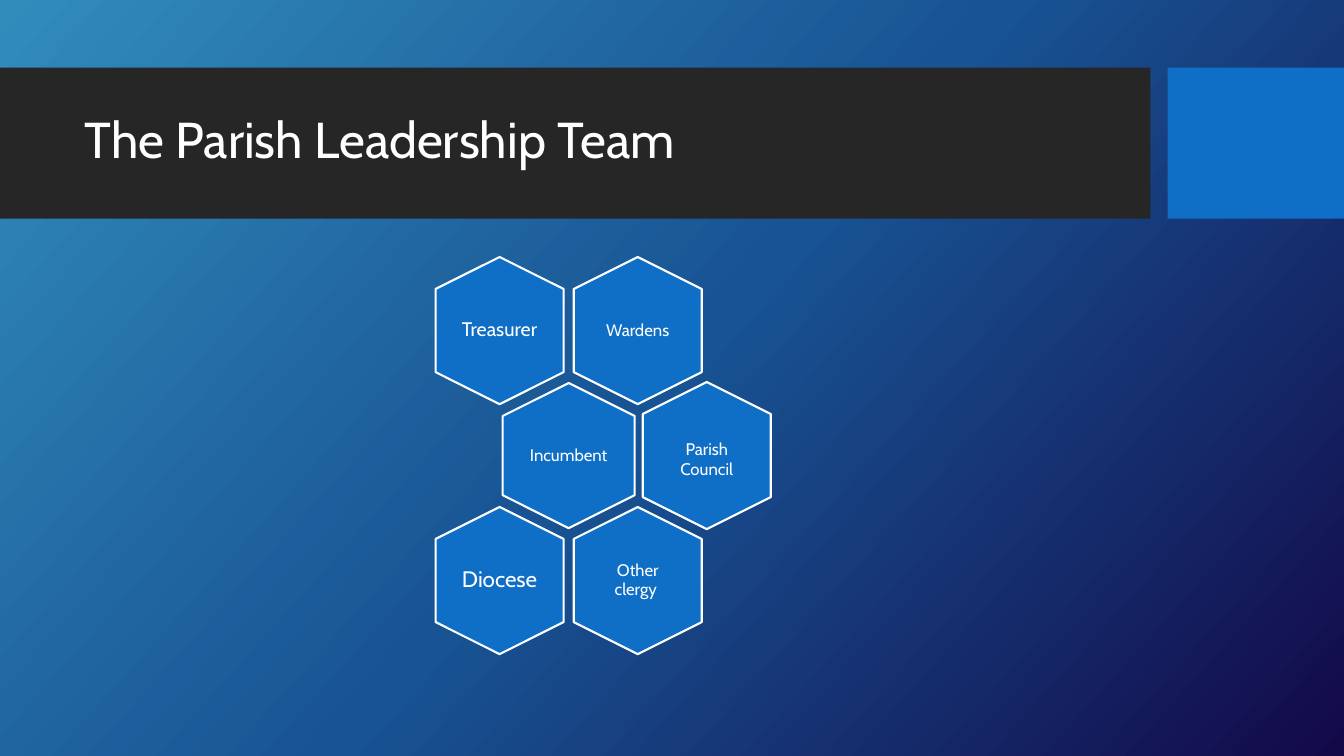
import copy

import pptx
import pptx.dml.color
import pptx.enum.shapes
import pptx.enum.text
import pptx.oxml.ns
import pptx.util

Inches = pptx.util.Inches
Pt = pptx.util.Pt

FONT = "Cabin"
COLORS = {
    "sky": "318CBC",
    "ocean": "185393",
    "night": "130949",
    "band": "262626",
    "accent": "0F6FC6",
    "white": "FFFFFF",
}
HEXAGON_SIZE = (1.46, 1.27)
INCUMBENT_SIZE = (1.44, 1.31)
LABEL_SIZE = (0.87, 1.0)
INCUMBENT_LABEL_SIZE = (0.89, 0.99)
COLUMN_STEP = 1.37
ROW_STEP = 1.24

# Each member: row, column, runs of (text, size), label inset
MEMBERS = [
    (0, 1, [("Wardens", 12)], 0.05),
    (0, 0, [("Treasurer", 14)], 0),
    (1, 0, [("Incumbent", 12)], 0.05),
    (1, 1, [("Parish", 12), (" ", 19), ("Council", 12)], 0),
    (2, 1, [("Other clergy ", 12)], 0.05),
    (2, 0, [("Diocese", 16)], 0),
]


def color(name):
    return pptx.dml.color.RGBColor.from_string(COLORS[name])


def add_run(paragraph, text, size):
    run = paragraph.add_run()
    run.text = text
    run.font.name = FONT
    run.font.size = Pt(size)
    run.font.color.rgb = color("white")


def add_filled_shape(slide, kind, box, fill):
    shape = slide.shapes.add_shape(kind, *map(Inches, box))
    shape.shadow.inherit = False
    shape.fill.solid()
    shape.fill.fore_color.rgb = color(fill)
    shape.line.fill.background()
    return shape


def centered_box(center_x, center_y, size):
    width, height = size
    return center_x - width / 2, center_y - height / 2, width, height


def paint_background(slide):
    fill = slide.background.fill
    fill.gradient()
    fill.gradient_angle = 318  # counter-clockwise
    stop_list = slide.element.find(".//" + pptx.oxml.ns.qn("a:gsLst"))
    stop_list.insert(1, copy.deepcopy(stop_list[0]))
    for stop, position, name in zip(
        fill.gradient_stops, (0, 0.5, 1), ("sky", "ocean", "night")
    ):
        stop.position = position
        stop.color.rgb = color(name)


def add_header(slide, left, top, width, height):
    rectangle = pptx.enum.shapes.MSO_SHAPE.RECTANGLE
    accent_width = 1.75
    band_width = width - accent_width - 0.17
    accent_left = left + width - accent_width
    add_filled_shape(slide, rectangle, (left, top, band_width, height), "band")
    add_filled_shape(slide, rectangle, (accent_left, top, accent_width, height), "accent")

    title = slide.shapes.title
    title.left, title.top = Inches(left + 0.74), Inches(top + 0.15)
    title.width, title.height = Inches(10.51), Inches(1.18)
    # Bring the title in front of the band
    slide.shapes.element.append(title.element)
    frame = title.text_frame
    frame.word_wrap = True
    frame.auto_size = pptx.enum.text.MSO_AUTO_SIZE.NONE
    frame.vertical_anchor = pptx.enum.text.MSO_ANCHOR.MIDDLE
    paragraph = frame.paragraphs[0]
    paragraph.alignment = pptx.enum.text.PP_ALIGN.LEFT
    paragraph.line_spacing = 0.9
    add_run(paragraph, "The Parish Leadership Team", 36)


def add_label(slide, box, runs, inset):
    frame = slide.shapes.add_textbox(*map(Inches, box)).text_frame
    frame.word_wrap = True
    frame.vertical_anchor = pptx.enum.text.MSO_ANCHOR.MIDDLE
    frame.margin_left = frame.margin_right = Inches(inset)
    frame.margin_top = frame.margin_bottom = Inches(inset)
    paragraph = frame.paragraphs[0]
    paragraph.alignment = pptx.enum.text.PP_ALIGN.CENTER
    paragraph.line_spacing = 0.9
    for text, size in runs:
        add_run(paragraph, text, size)


def add_honeycomb(slide, left, top):
    """Place the members in rows of hexagons, every second row shifted half a step."""
    length, breadth = HEXAGON_SIZE
    for row, column, runs, inset in MEMBERS:
        center_x = left + breadth / 2 + (column + row % 2 / 2) * COLUMN_STEP
        center_y = top + length / 2 + row * ROW_STEP
        is_incumbent = runs[0][0] == "Incumbent"
        size = INCUMBENT_SIZE if is_incumbent else HEXAGON_SIZE
        label_size = INCUMBENT_LABEL_SIZE if is_incumbent else LABEL_SIZE

        hexagon = add_filled_shape(
            slide,
            pptx.enum.shapes.MSO_SHAPE.HEXAGON,
            centered_box(center_x, center_y, size),
            "accent",
        )
        hexagon.rotation = 90
        hexagon.adjustments[0] = 0.25
        hexagon.line.color.rgb = color("white")
        hexagon.line.width = Pt(1.5)
        add_label(slide, centered_box(center_x, center_y, label_size), runs, inset)


def main():
    presentation = pptx.Presentation()
    presentation.slide_width = Inches(13.33)
    presentation.slide_height = Inches(7.5)
    slide = presentation.slides.add_slide(presentation.slide_layouts[5])
    paint_background(slide)
    add_header(slide, 0, 0.67, 13.33, 1.5)
    add_honeycomb(slide, 4.32, 2.55)
    presentation.save("out.pptx")


if __name__ == "__main__":
    main()
